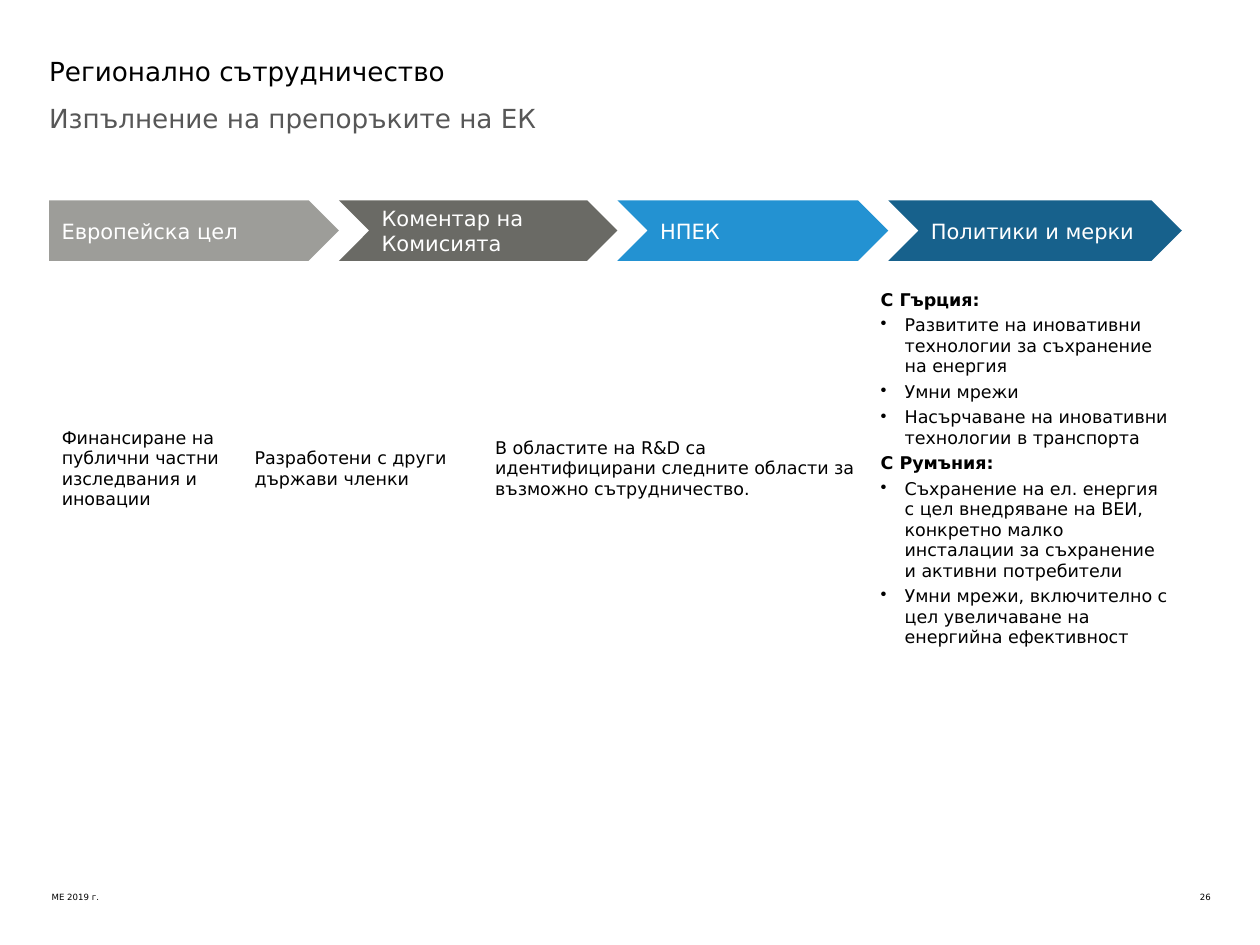
from lxml import etree
from pptx import Presentation
from pptx.dml.color import RGBColor
from pptx.enum.shapes import MSO_SHAPE as Shape
from pptx.enum.text import MSO_ANCHOR as Anchor, PP_ALIGN as Align
from pptx.oxml.ns import qn
from pptx.util import Inches, Pt

BLACK = RGBColor(0x00, 0x00, 0x00)
WHITE = RGBColor(0xFF, 0xFF, 0xFF)
SUBTITLE_GRAY = RGBColor(0x57, 0x57, 0x57)
LIGHT_GRAY = RGBColor(0x9D, 0x9D, 0x99)
DARK_GRAY = RGBColor(0x6A, 0x6A, 0x65)
BLUE = RGBColor(0x23, 0x92, 0xD2)
NAVY = RGBColor(0x17, 0x61, 0x8C)

FONT = "DejaVu Sans"
LEFT = 0.39
PADDING = 0.1
INDENT = 0.19

STAGES = [
    ("Европейска цел", 2.3, LIGHT_GRAY),
    ("Коментар на Комисията", 2.21, DARK_GRAY),
    ("НПЕК", 2.15, BLUE),
    ("Политики и мерки", 2.33, NAVY),
]

# Table columns: width and content; a pair is a heading with its bullets
DETAILS = [
    (1.53, ["Финансиране на публични частни изследвания и иновации"]),
    (1.91, ["Разработени с други държави членки"]),
    (3.06, ["В областите на R&D са идентифицирани следните области за "
            "възможно сътрудничество."]),
    (2.49, [
        ("С Гърция:", [
            "Развитите на иновативни технологии за съхранение на енергия",
            "Умни мрежи",
            "Насърчаване на иновативни технологии в транспорта",
        ]),
        ("С Румъния:", [
            "Съхранение на ел. енергия с цел внедряване на ВЕИ, конкретно "
            "малко инсталации за съхранение и активни потребители",
            "Умни мрежи, включително с цел увеличаване на енергийна "
            "ефективност",
        ]),
    ]),
]


def write(frame, text, size=10, color=BLACK, bold=False, align=Align.LEFT,
          bullet=False, before=0):
    """Fill the empty first paragraph of a frame, or append a new one."""
    first = frame.paragraphs[0]
    paragraph = frame.add_paragraph() if first.runs else first
    if bullet:
        props = paragraph._p.get_or_add_pPr()
        props.set("marL", str(Inches(INDENT)))
        props.set("indent", str(-Inches(INDENT)))
        etree.SubElement(props, qn("a:buChar")).set("char", "•")
    paragraph.alignment = align
    if before and paragraph is not first:
        paragraph.space_before = Pt(before)
    run = paragraph.add_run()
    run.text = text
    run.font.name = FONT
    run.font.size = Pt(size)
    run.font.bold = bold
    run.font.color.rgb = color


def pad(area, margin):
    area.margin_left = area.margin_right = Inches(margin)
    area.margin_top = area.margin_bottom = Inches(margin)


def add_label(slide, box, text, **style):
    frame = slide.shapes.add_textbox(*map(Inches, box)).text_frame
    frame.word_wrap = True
    pad(frame, 0)
    write(frame, text, **style)


def add_heading(slide, left, top, width, row):
    add_label(slide, (left, top, width, row), "Регионално сътрудничество",
              size=15)
    add_label(slide, (left, top + row, width, row),
              "Изпълнение на препоръките на ЕК", size=15, color=SUBTITLE_GRAY)


def add_stages(slide, left, top, height):
    for index, (name, width, color) in enumerate(STAGES):
        kind = Shape.CHEVRON if index else Shape.PENTAGON
        stage = slide.shapes.add_shape(
            kind, *map(Inches, (left, top, width, height)))
        stage.shadow.inherit = False
        stage.fill.solid()
        stage.fill.fore_color.rgb = color
        stage.line.fill.background()
        frame = stage.text_frame
        frame.word_wrap = True
        frame.vertical_anchor = Anchor.MIDDLE
        pad(frame, PADDING)
        write(frame, name, size=12, color=WHITE)
        left += width


def add_details(slide, left, top, height):
    width = sum(column_width for column_width, _ in DETAILS)
    table = slide.shapes.add_table(
        1, len(DETAILS), *map(Inches, (left, top, width, height))).table
    table.first_row = table.horz_banding = False
    for index, (column_width, entries) in enumerate(DETAILS):
        table.columns[index].width = Inches(column_width)
        cell = table.cell(0, index)
        cell.fill.background()
        cell.vertical_anchor = Anchor.MIDDLE
        pad(cell, PADDING)
        for entry in entries:
            if isinstance(entry, str):
                write(cell.text_frame, entry)
                continue
            heading, measures = entry
            write(cell.text_frame, heading, bold=True, before=3)
            for measure in measures:
                write(cell.text_frame, measure, bullet=True, before=3)


def add_footer(slide, left, top, right):
    add_label(slide, (left, top, 4.39, 0.22), "МЕ 2019 г.", size=4.9)
    add_label(slide, (right - 0.25, top, 0.25, 0.08), "26", size=4.9,
              align=Align.RIGHT)


def main():
    deck = Presentation()
    deck.slide_width, deck.slide_height = Inches(10), Inches(7.5)
    slide = deck.slides.add_slide(deck.slide_layouts[6])
    add_heading(slide, LEFT, 0.44, 9.23, 0.37)
    add_stages(slide, LEFT, 1.59, 0.48)
    add_details(slide, LEFT, 2.16, 2.62)
    add_footer(slide, 0.41, 7.08, 9.61)
    deck.save("out.pptx")


if __name__ == "__main__":
    main()
